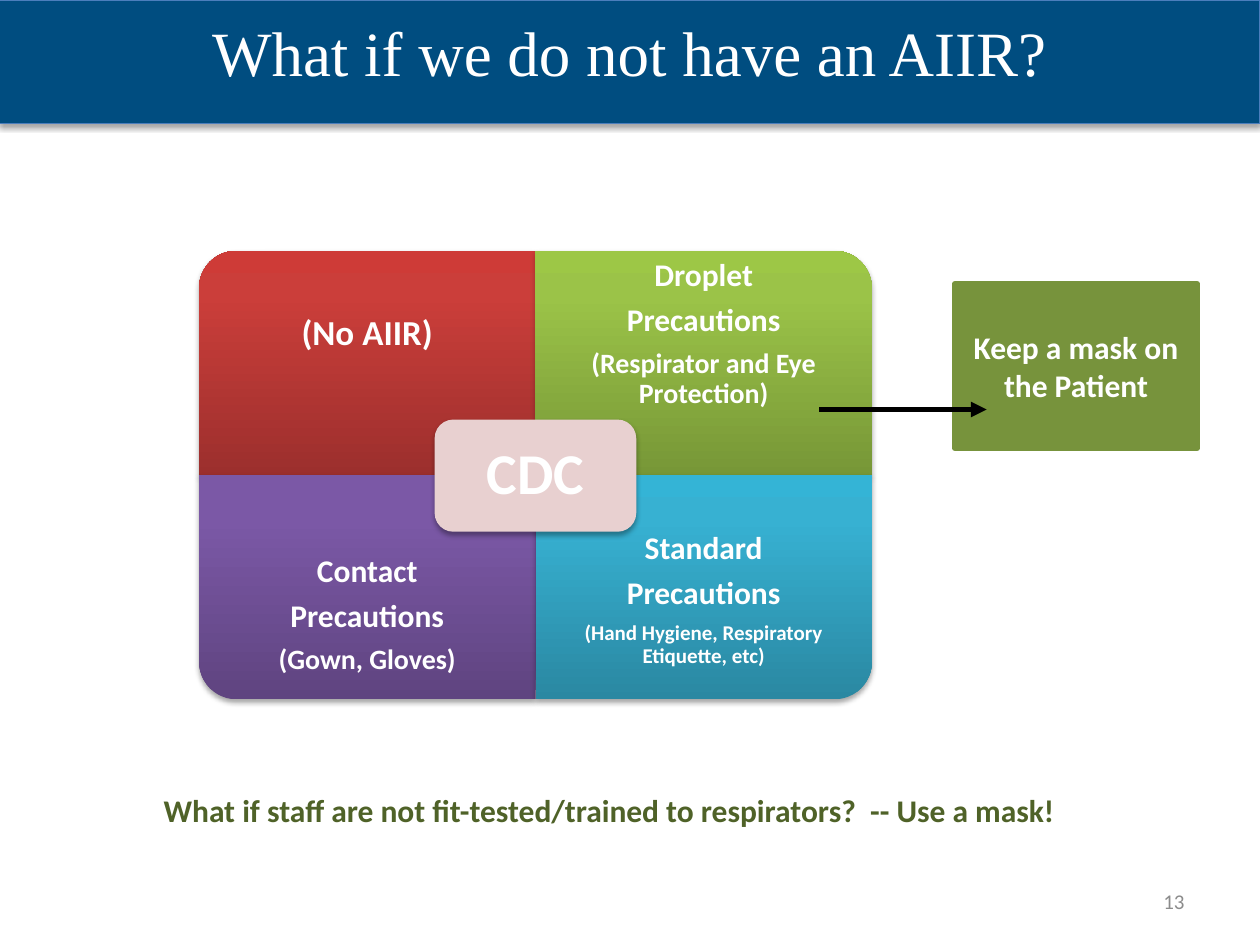
from pptx import Presentation
from pptx.dml.color import RGBColor
from pptx.enum.shapes import MSO_CONNECTOR, MSO_SHAPE
from pptx.enum.text import MSO_ANCHOR as Anchor, PP_ALIGN as Align
from pptx.oxml import parse_xml
from pptx.oxml.ns import nsdecls, qn
from pptx.util import Inches, Pt


def color(value):
    return RGBColor.from_string(value)


def write_text(shape, lines, size=18, sizes=None, font="Calibri", fill="FFFFFF",
               bold=True, align=Align.CENTER, anchor=Anchor.MIDDLE,
               inset=None, top_inset=None, line_spacing=None, after=None):
    """Write one paragraph per line; after is a share of the text size."""
    frame = shape.text_frame
    frame.word_wrap = True
    frame.vertical_anchor = anchor
    if inset is not None:
        frame.margin_left = frame.margin_right = Inches(inset)
        frame.margin_top = frame.margin_bottom = Inches(inset)
    if top_inset is not None:
        frame.margin_top = Inches(top_inset)
    for index, line in enumerate(lines):
        paragraph = frame.add_paragraph() if index else frame.paragraphs[0]
        points = sizes[index] if sizes else size
        paragraph.alignment = align
        if line_spacing:
            paragraph.line_spacing = line_spacing
        if after:
            paragraph.space_after = Pt(round(after * points, 1))
        run = paragraph.add_run()
        run.text = line
        run.font.name = font
        run.font.size = Pt(points)
        run.font.bold = bold
        run.font.color.rgb = color(fill)


class SlideBuilder:
    navy, band_line = "004D80", "4B7EBC"
    olive, dark_olive = "77933C", "4F6228"
    grey, pink, black = "8C8C8C", "E8D0D0", "000000"
    matrix_text = dict(line_spacing=0.9, after=0.35)

    def __init__(self, presentation):
        self.slide = presentation.slides.add_slide(presentation.slide_layouts[5])
        self.shapes = self.slide.shapes

    def start_group(self):
        self.shapes = self.slide.shapes.add_group_shape().shapes

    def end_group(self):
        self.shapes = self.slide.shapes

    def style(self, shape, fill, line=None, line_width=1, shadow=False):
        shape.fill.solid()
        shape.fill.fore_color.rgb = color(fill)
        if line:
            shape.line.color.rgb = color(line)
            shape.line.width = Pt(line_width)
        else:
            shape.line.fill.background()
        shape.shadow.inherit = False
        if shadow:
            self.add_shadow(shape)

    def add_shadow(self, shape):
        effects = shape._element.spPr.find(qn("a:effectLst"))
        effects.append(parse_xml(
            f'<a:outerShdw {nsdecls("a")} blurRad="{Pt(3.1)}" dist="{Pt(1.8)}" '
            'dir="5400000" rotWithShape="0"><a:srgbClr val="000000">'
            '<a:alpha val="35000"/></a:srgbClr></a:outerShdw>'))

    def title(self, text):
        title = self.slide.shapes.title
        title.left, title.top = Inches(-0.01), 0
        title.width, title.height = Inches(10.01), Inches(0.98)
        self.style(title, self.navy, self.band_line, 0.75, shadow=True)
        write_text(title, [text], size=36, font="Times New Roman", bold=False,
                   anchor=Anchor.TOP, top_inset=0.11)

    def text(self, left, top, width, height, lines, **text_format):
        box = self.shapes.add_textbox(*map(Inches, (left, top, width, height)))
        write_text(box, lines, **text_format)

    def box(self, kind, left, top, width, height, fill, **shape_format):
        shape = self.shapes.add_shape(kind, *map(Inches, (left, top, width, height)))
        self.style(shape, fill, **shape_format)
        return shape

    def quadrant(self, left, top, width, height, rotation, gradient):
        """Cell with its rounded corner turned outwards and dark at the bottom."""
        center_x, center_y = left + width / 2, top + height / 2
        if rotation % 180:
            width, height = height, width
        shape = self.box(MSO_SHAPE.ROUND_1_RECTANGLE, center_x - width / 2,
                         center_y - height / 2, width, height, gradient[0], shadow=True)
        shape.rotation = rotation
        stops = "".join(
            f'<a:gs pos="{position}000"><a:srgbClr val="{value}"/></a:gs>'
            for position, value in zip((0, 80, 100), gradient))
        properties = shape._element.spPr
        properties.replace(properties.find(qn("a:solidFill")), parse_xml(
            f'<a:gradFill {nsdecls("a")} rotWithShape="0"><a:gsLst>{stops}</a:gsLst>'
            '<a:lin ang="16200000" scaled="0"/></a:gradFill>'))

    def arrow(self, x1, y1, x2, y2):
        connector = self.shapes.add_connector(
            MSO_CONNECTOR.STRAIGHT, *map(Inches, (x1, y1, x2, y2)))
        connector.line.color.rgb = color(self.black)
        connector.line.width = Pt(3)
        properties = connector._element.spPr
        properties.find(qn("a:ln")).append(
            parse_xml(f'<a:tailEnd {nsdecls("a")} type="triangle"/>'))
        properties.append(parse_xml(f'<a:effectLst {nsdecls("a")}/>'))


def main():
    presentation = Presentation()
    presentation.slide_width, presentation.slide_height = Inches(10), Inches(7.5)
    builder = SlideBuilder(presentation)

    # Title band and slide number
    builder.title("What if we do not have an AIIR?")
    builder.text(7.17, 6.95, 2.33, 0.4, ["13"], size=12, fill=builder.grey,
                 bold=False, align=Align.RIGHT)

    # Precaution matrix: column, row, rotation, gradient, text top, inset, lines, sizes
    left, top, width, height = 1.58, 1.99, 2.67, 1.78
    quadrants = [
        (0, 0, 270, ("9C2F2D", "CB3E3A", "CE3B37"), 1.99, 0.16,
         ["(No AIIR)"], [20]),
        (1, 0, 0, ("779737", "9BC348", "9DC746"), 1.99, 0.14,
         ["Droplet", "Precautions", "(Respirator and Eye Protection)"], [18, 18, 16]),
        (0, 1, 180, ("5F4480", "7B58A6", "7C57A8"), 4.22, 0.14,
         ["Contact", "Precautions", "(Gown, Gloves)"], [18, 18, 16]),
        (1, 1, 90, ("2A88A2", "37B1D2", "34B4D6"), 4.1, 0.14,
         ["Standard", "Precautions", "(Hand Hygiene, Respiratory Etiquette, etc)"],
         [18, 18, 12]),
    ]
    builder.start_group()
    for column, row, rotation, gradient, text_top, inset, lines, sizes in quadrants:
        cell_left = left + column * width
        builder.quadrant(cell_left, top + row * height, width, height, rotation, gradient)
        builder.text(cell_left, text_top, width, 1.33, lines, sizes=sizes,
                     inset=inset, **builder.matrix_text)

    # Centre label
    center = builder.box(MSO_SHAPE.ROUNDED_RECTANGLE, 3.45, 3.33, 1.6, 0.89,
                         builder.pink, shadow=True)
    write_text(center, ["CDC"], size=33, inset=0.14, **builder.matrix_text)
    builder.end_group()

    # Mask note and its arrow
    note = builder.box(MSO_SHAPE.RECTANGLE, 7.58, 2.25, 1.92, 1.31, builder.olive,
                       line=builder.olive, line_width=3)
    write_text(note, ["Keep a mask on the Patient"])
    builder.arrow(6.5, 3.25, 7.83, 3.25)

    # Closing question
    builder.text(1.2, 6.23, 7.42, 0.4,
                 ["What if staff are not fit-tested/trained to respirators?  -- Use a mask!"],
                 fill=builder.dark_olive, align=Align.LEFT, anchor=Anchor.TOP)

    presentation.save("out.pptx")


if __name__ == "__main__":
    main()
